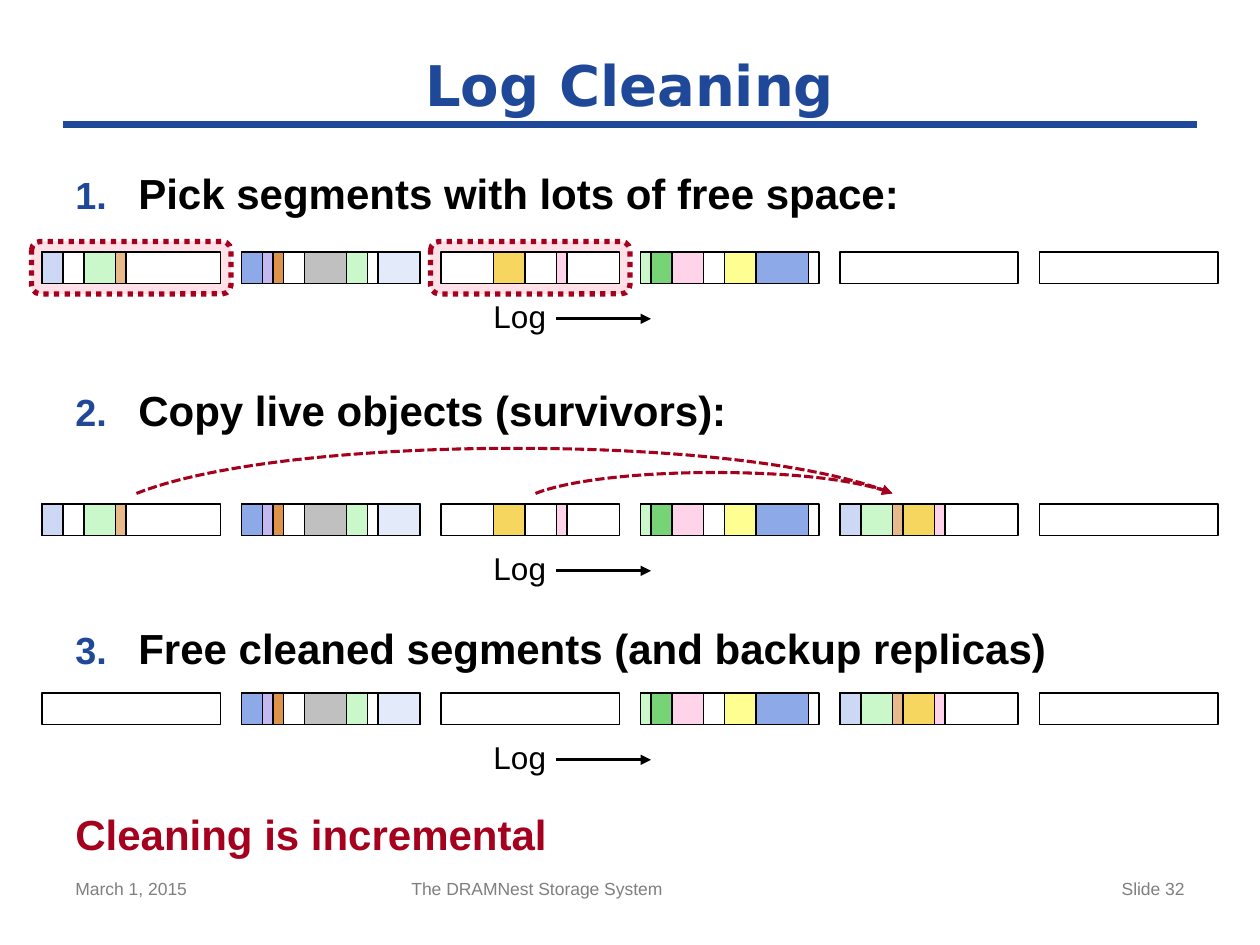
from lxml import etree
from pptx import Presentation
from pptx import util as u
from pptx.dml.color import RGBColor
from pptx.enum import dml, shapes, text
from pptx.oxml.ns import qn

COLORS = {
    "blue": "1F4899", "red": "A5001E", "blush": "FFE1E7", "footer": "7F7F7F",
    "black": "000000", "white": "FFFFFF", "mist": "CCD8F4", "mint": "CAF8CA",
    "tan": "E8B989", "sky": "8DA9E7", "lilac": "C4B8F0", "orange": "DC944C",
    "silver": "C0C0C0", "ice": "E3EAF9", "gold": "F7D65F", "pink": "FFD3E9",
    "green": "76D476", "yellow": "FFFF91",
}
GRID = 2.54 / 12
SEGMENT_LEFT, SEGMENT_PITCH, SEGMENT_WIDTH, SEGMENT_HEIGHT = 4, 19, 17, 3

presentation = Presentation()
presentation.slide_width = u.Cm(25.4)
presentation.slide_height = u.Cm(19.05)
slide = presentation.slides.add_slide(presentation.slide_layouts[6])


def add_box(kind, left, top, width, height, fill, line, weight):
    shape = slide.shapes.add_shape(kind, *[u.Cm(GRID * n) for n in (left, top, width, height)])
    shape.shadow.inherit = False
    shape.fill.solid()
    shape.fill.fore_color.rgb = RGBColor.from_string(COLORS[fill])
    shape.line.color.rgb = RGBColor.from_string(COLORS[line])
    shape.line.width = u.Pt(weight)
    return shape


def add_text(left, top, width, height, lines, size, color, font="Arial", bold=False):
    shape = slide.shapes.add_textbox(*[u.Cm(GRID * n) for n in (left, top, width, height)])
    frame = shape.text_frame
    frame.word_wrap = True
    frame.text = "\n".join(lines)
    for paragraph in frame.paragraphs:
        paragraph.font.name = font
        paragraph.font.size = u.Pt(size)
        paragraph.font.bold = bold
        paragraph.font.color.rgb = RGBColor.from_string(COLORS[color])
    return frame


title = add_text(6, 4, 108, 8, ["Log Cleaning"], 32, "blue", "DejaVu Sans", True)
title.vertical_anchor = text.MSO_ANCHOR.MIDDLE
title.paragraphs[0].alignment = text.PP_ALIGN.CENTER

steps = [
    "Pick segments with lots of free space:",
    "Copy live objects (survivors):",
    "Free cleaned segments (and backup replicas)",
    "Cleaning is incremental",
]
body = add_text(6, 15.4, 108, 65, steps, 24, "black", bold=True)
for paragraph, space in zip(body.paragraphs, (0, 95, 107, 77.5)):
    paragraph.space_before = u.Pt(space)
for paragraph in body.paragraphs[:3]:
    properties = paragraph._p.get_or_add_pPr()
    properties.set("marL", str(u.Cm(1.27)))
    properties.set("indent", str(u.Cm(-1.27)))
    bullets = [
        etree.Element(qn("a:buClr")),
        etree.Element(qn("a:buSzPct"), val="90000"),
        etree.Element(qn("a:buFont"), typeface="Arial"),
        etree.Element(qn("a:buAutoNum"), type="arabicPeriod"),
    ]
    etree.SubElement(bullets[0], qn("a:srgbClr"), val=COLORS["blue"])
    for bullet in bullets:
        properties.find(qn("a:defRPr")).addprevious(bullet)
body.paragraphs[3].font.color.rgb = RGBColor.from_string(COLORS["red"])

footers = [
    (6, 28, "March 1, 2015", text.PP_ALIGN.LEFT),
    (38, 45, "The DRAMNest Storage System", text.PP_ALIGN.LEFT),
    (86, 28, "Slide 32", text.PP_ALIGN.RIGHT),
]
for left, width, words, alignment in footers:
    footer = add_text(left, 83, width, 5.2, [words], 10, "footer")
    footer.paragraphs[0].alignment = alignment

for left in (3, 41):
    highlight = add_box(shapes.MSO_SHAPE.ROUNDED_RECTANGLE, left, 23, 19, 5, "blush", "red", 3)
    highlight.line.dash_style = dml.MSO_LINE.ROUND_DOT

first = [(0, 2, "mist"), (4, 3, "mint"), (7, 1, "tan")]
second = [(0, 2, "sky"), (2, 1, "lilac"), (3, 1, "orange"),
          (6, 4, "silver"), (10, 2, "mint"), (13, 4, "ice")]
third = [(5, 3, "gold"), (11, 1, "pink")]
fourth = [(0, 1, "mint"), (1, 2, "green"), (3, 3, "pink"), (8, 3, "yellow"), (11, 5, "sky")]
survivors = []
offset = 0
for _, width, color in first + third:
    survivors.append((offset, width, color))
    offset += width

logs = [
    (24, [first, second, third, fourth, [], []]),
    (48, [first, second, third, fourth, survivors, []]),
    (66, [[], second, [], fourth, survivors, []]),
]
lines = [(6, 114, 11.88, "blue", 4, False)]
for top, segments in logs:
    for index, live_objects in enumerate(segments):
        left = SEGMENT_LEFT + index * SEGMENT_PITCH
        for offset, width, color in [(0, SEGMENT_WIDTH, "white")] + live_objects:
            add_box(shapes.MSO_SHAPE.RECTANGLE, left + offset, top, width, SEGMENT_HEIGHT,
                    color, "black", 1)
    label = add_text(47, top + 4.3, 5, 3.6, ["Log"], 18, "black")
    label.word_wrap = False
    label.margin_left = label.margin_right = label.margin_top = label.margin_bottom = 0
    label.paragraphs[0].alignment = text.PP_ALIGN.CENTER
    lines.append((53, 62, top + 6.36, "black", 1.5, True))

arrows = []
for start, end, y, color, weight, has_head in lines:
    connector = slide.shapes.add_connector(
        shapes.MSO_CONNECTOR.STRAIGHT, *[u.Cm(GRID * n) for n in (start, y, end, y)])
    connector.line.color.rgb = RGBColor.from_string(COLORS[color])
    connector.line.width = u.Pt(weight)
    etree.SubElement(connector._element.spPr, qn("a:effectLst"))
    if has_head:
        arrows.append(connector)

arc_profile = [(0.1, 2 / 3), (0.3, 1), (0.5, 1), (0.7, 1), (0.9, 2 / 3), (1, 0)]
for start, rise in ((13, 4.3), (51, 2)):
    end, base = 85, 47
    points = [(u.Cm(GRID * (start + x * (end - start))), u.Cm(GRID * (base - y * rise)))
              for x, y in arc_profile]
    builder = slide.shapes.build_freeform(u.Cm(GRID * start), u.Cm(GRID * base))
    builder.add_line_segments(points, close=False)
    arc = builder.convert_to_shape()
    arc.shadow.inherit = False
    arc.fill.background()
    arc.line.color.rgb = RGBColor.from_string(COLORS["red"])
    arc.line.width = u.Pt(1.75)
    arc.line.dash_style = dml.MSO_LINE.SQUARE_DOT
    arc._element.spPr.find(".//" + qn("a:prstDash")).set("val", "sysDash")
    straight = arc._element.spPr.findall(".//" + qn("a:lnTo"))
    for group in (straight[:3], straight[3:]):
        curve = etree.Element(qn("a:cubicBezTo"))
        group[0].addprevious(curve)
        for segment in group:
            curve.append(segment[0])
            segment.getparent().remove(segment)
    arrows.append(arc)

for arrow in arrows:
    etree.SubElement(arrow._element.spPr.find(qn("a:ln")), qn("a:tailEnd"), type="triangle")

presentation.save("out.pptx")
